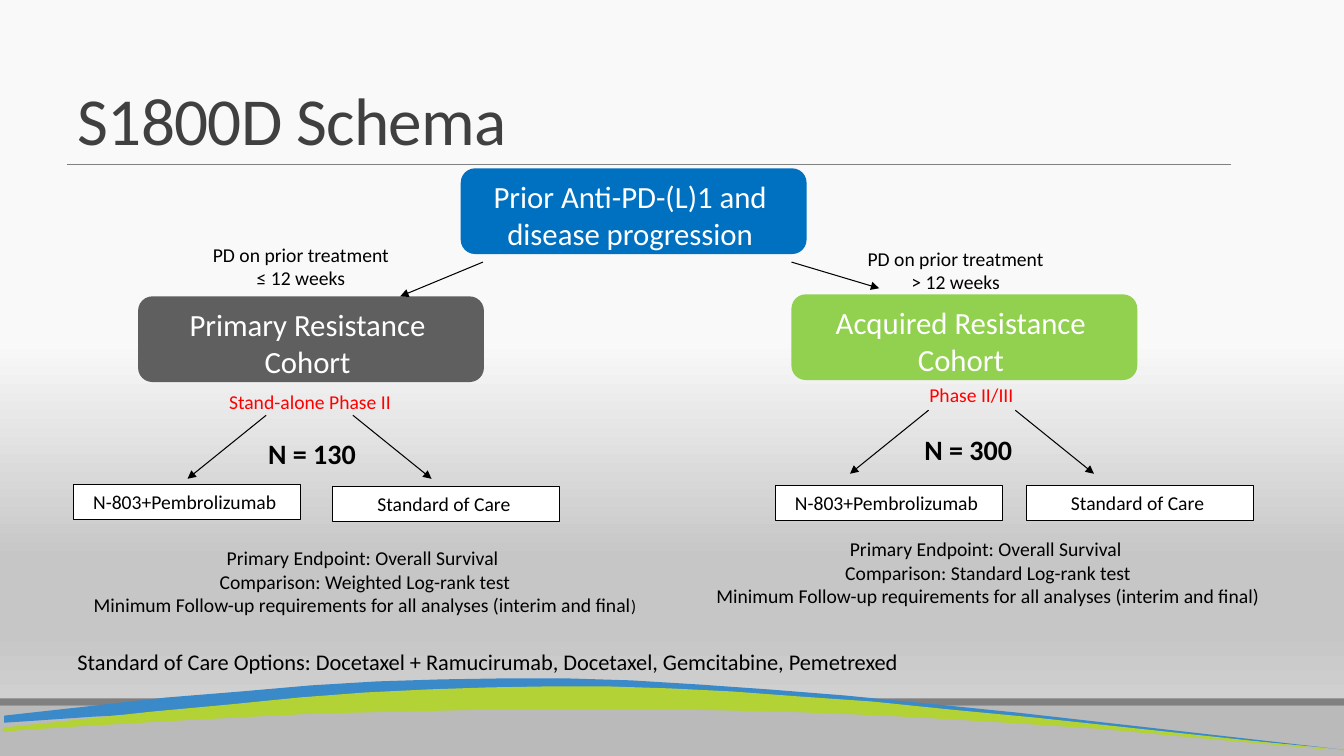
import pptx
import pptx.util
import pptx.dml.color
import pptx.enum.shapes
import pptx.enum.text
import pptx.oxml.ns
from lxml import etree

CELL = pptx.util.Inches(0.01)  # the slide is a grid of 1333 columns and 750 rows
WIDE, HIGH = 1333, 750
INK = {
    "pale": "F9F9F9", "mid": "C6C6C6", "end": "D9D9D9", "foot": "BABABA",
    "rule": "808080", "sky": "3A89C9", "lime": "B2D235", "title": "404040",
    "black": "000000", "white": "FFFFFF", "red": "FF0000",
    "blue": "0070C0", "gray": "5F5F5F", "green": "92D050",
}
SHAPE = pptx.enum.shapes.MSO_SHAPE
ALIGN = pptx.enum.text.PP_ALIGN
TOP = pptx.enum.text.MSO_ANCHOR.TOP
qn = pptx.oxml.ns.qn
rgb = pptx.dml.color.RGBColor.from_string

deck = pptx.Presentation()
deck.slide_width, deck.slide_height = WIDE * CELL, HIGH * CELL
slide = deck.slides.add_slide(deck.slide_layouts[5])
shapes = slide.shapes


def write(text, box, kind=None, fill=None, edge=None, size=14, ink="black",
          bold=False, align=ALIGN.CENTER, wrap=True):
    """Add a text box, or a shape of the given kind, and return its text frame."""
    spot = [n * CELL for n in box]
    if kind is None:
        shape = shapes.add_textbox(*spot)
    else:
        shape = shapes.add_shape(kind, *spot)
        shape.shadow.inherit = False
        shape.fill.solid()
        shape.fill.fore_color.rgb = rgb(INK[fill])
        if edge:
            shape.line.color.rgb = rgb(INK[edge])
            shape.line.width = pptx.util.Pt(0.75)
        else:
            shape.line.fill.background()
    frame = shape.text_frame
    frame.text = text
    frame.word_wrap = wrap
    frame.vertical_anchor = TOP
    for para in frame.paragraphs:
        para.alignment = align
        for run in para.runs:
            run.font.name = "Calibri"
            run.font.size = pptx.util.Pt(size)
            run.font.bold = bold
            run.font.color.rgb = rgb(INK[ink])
    return frame


def join(start, stop, ink="black", width=0.75, head=True):
    """Draw a straight line between two grid points, with an arrowhead if asked."""
    ends = [n * CELL for n in (*start, *stop)]
    line = shapes.add_connector(pptx.enum.shapes.MSO_CONNECTOR.STRAIGHT, *ends)
    line.line.color.rgb = rgb(INK[ink])
    line.line.width = pptx.util.Pt(width)
    if head:
        etree.SubElement(line.line._get_or_add_ln(), qn("a:tailEnd"), type="triangle")
    etree.SubElement(line._element.spPr, qn("a:effectLst"))


# Background
back = slide.background.fill
back.gradient()
back.gradient_angle = 270
stops = slide.element.find(".//" + qn("a:gsLst"))
for stop in list(stops):
    stops.remove(stop)
for share, ink in ((45, "pale"), (74, "mid"), (83, "mid"), (100, "end")):
    stop = etree.SubElement(stops, qn("a:gs"), pos=str(share * 1000))
    etree.SubElement(stop, qn("a:srgbClr"), val=INK[ink])

# Footer bands, rule and swooshes
write("", (0, 700, WIDE, 50), SHAPE.RECTANGLE, "foot")
write("", (0, 693, WIDE, 7), SHAPE.RECTANGLE, "rule")
join((66, 163), (1221, 163), ink="rule", width=0.5, head=False)

swooshes = {
    "sky": (
        [(920, 698), (537, 698), (639, 699), (744, 701), (852, 705), (962, 711),
         (1074, 720), (1306, 741), (1326, 743), (1335, 744), (1009, 707)],
        [(500, 673), (438, 674), (374, 676), (308, 680), (239, 686), (165, 692),
         (85, 701), (4, 710), (4, 717), (20, 716), (93, 711), (171, 707),
         (256, 703), (345, 701), (439, 699), (537, 698), (920, 698), (838, 690),
         (763, 684), (692, 679), (626, 675), (562, 673)],
    ),
    "lime": (
        [(943, 704), (579, 704), (676, 704), (776, 706), (878, 710), (982, 716),
         (1088, 723), (1308, 743), (1327, 744), (1336, 745), (1027, 712)],
        [(544, 681), (485, 682), (425, 684), (363, 687), (297, 692), (227, 699),
         (151, 706), (68, 715), (3, 722), (3, 726), (27, 724), (90, 720),
         (158, 716), (233, 712), (312, 708), (397, 706), (486, 704), (579, 704),
         (943, 704), (865, 696), (793, 691), (726, 686), (664, 683), (603, 681)],
    ),
}
for ink, (tip, body) in swooshes.items():
    path = shapes.build_freeform(*tip[0], scale=CELL)
    path.add_line_segments(tip[1:])
    path.move_to(*body[0])
    path.add_line_segments(body[1:])
    wave = path.convert_to_shape()
    wave.shadow.inherit = False
    wave.fill.solid()
    wave.fill.fore_color.rgb = rgb(INK[ink])
    wave.line.fill.background()

# Title
title = shapes.title
title.left, title.top, title.width, title.height = [n * CELL for n in (67, 4, 1153, 159)]
title.text_frame.text = "S1800D Schema"
title.text_frame.vertical_anchor = pptx.enum.text.MSO_ANCHOR.BOTTOM
para = title.text_frame.paragraphs[0]
para.alignment = ALIGN.LEFT
para.line_spacing = 0.85
run = para.runs[0]
run.font.name = "Calibri"
run.font.size = pptx.util.Pt(48)
run.font.color.rgb = rgb(INK["title"])
run.font._element.set("spc", "-50")

write("Standard of Care Options: Docetaxel + Ramucirumab, Docetaxel, Gemcitabine, Pemetrexed",
      (67, 638, 987, 37), size=16, align=ALIGN.LEFT)

# Flow: one root, two cohorts
node = dict(kind=SHAPE.ROUNDED_RECTANGLE, size=22, ink="white", wrap=False)
write("Prior Anti-PD-(L)1 and \ndisease progression ", (457, 167, 343, 85), fill="blue", **node)

cohorts = [
    dict(name="Primary Resistance \nCohort ", at=(137, 294), fill="gray",
         link=((479, 260), (397, 294)),
         rule="PD on prior treatment\n≤ 12 weeks", rule_box=(182, 236, 233, 57),
         phase="Stand-alone Phase II", phase_at=(195, 382),
         count="N = 130 ", count_at=(200, 428), fork=(307, 412),
         drug_at=(73, 481), care_at=(330, 483),
         test="Weighted", note_at=(82, 537), close=12),
    dict(name="Acquired Resistance \nCohort ", at=(785, 292), fill="green",
         link=((785, 260), (872, 286)),
         rule="PD on prior treatment \n> 12 weeks ", rule_box=(814, 240, 272, 57),
         phase="Phase II/III", phase_at=(851, 375),
         count="N = 300 ", count_at=(851, 424), fork=(964, 407),
         drug_at=(769, 482), care_at=(1018, 482),
         test="Standard", note_at=(700, 528), close=14),
]
for arm in cohorts:
    write(arm["name"], (*arm["at"], 343, 85), fill=arm["fill"], **node)
    join(*arm["link"])
    write(arm["rule"], arm["rule_box"])
    write(arm["phase"], (*arm["phase_at"], 225, 34), ink="red")
    write(arm["count"], (*arm["count_at"], 225, 38), size=20, bold=True)
    mid, top = arm["fork"]
    for side in (-1, 1):
        join((mid + side * 43, top), (mid + side * 121, top + 63))
    for text, spot in (("N-803+Pembrolizumab ", "drug_at"), ("Standard of Care ", "care_at")):
        write(text, (*arm[spot], 225, 34), SHAPE.RECTANGLE, "white", "black")
    note = write("Primary Endpoint: Overall Survival \n"
                 f"Comparison: {arm['test']} Log-rank test\n"
                 "Minimum Follow-up requirements for all analyses (interim and final",
                 (*arm["note_at"], 560, 81))
    run = note.paragraphs[-1].add_run()
    run.text = ") "
    run.font.name = "Calibri"
    run.font.size = pptx.util.Pt(arm["close"])
    run.font.color.rgb = rgb(INK["black"])

deck.save("out.pptx")
